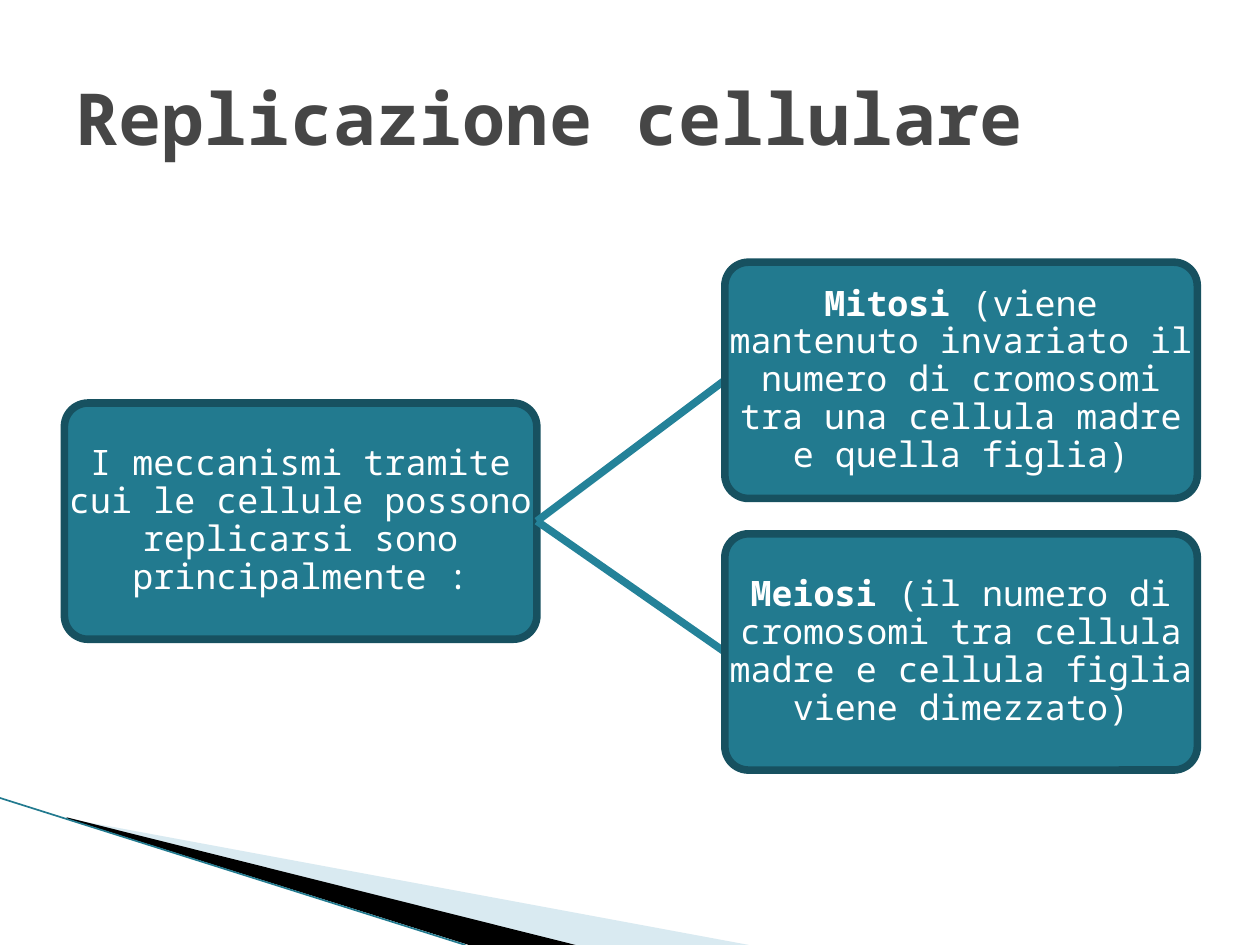
import pptx
import pptx.util
import pptx.dml.color
import pptx.enum.shapes
import pptx.enum.text
import pptx.oxml.ns
import pptx.oxml.xmlchemy

Pt = pptx.util.Pt
Shape = pptx.enum.shapes.MSO_SHAPE
Align = pptx.enum.text.PP_ALIGN
Anchor = pptx.enum.text.MSO_ANCHOR
qn = pptx.oxml.ns.qn
make = pptx.oxml.xmlchemy.OxmlElement

COLORS = {
    "title": "464646",
    "text": "FFFFFF",
    "box": "227A8F",
    "edge": "175160",
    "link": "248299",
    "pale": "A0CBDC",
    "black": "000000",
}
BOX_W, BOX_H = 270, 135
ROOT_X, LEAF_X = 36.8, 414.2
LEAF_Y, STEP = 149.8, 155.25
ROOT_Y = 230.3
LEAVES = [
    [("Mitosi ", True),
     ("(viene mantenuto invariato il numero di cromosomi "
      "tra una cellula madre e quella figlia)", False)],
    [("Meiosi", True),
     (" (il numero di cromosomi tra cellula madre "
      "e cellula figlia viene dimezzato)", False)],
]


def color(name):
    return pptx.dml.color.RGBColor.from_string(COLORS[name])


class Deck:
    font = "Noto Sans Mono"
    size = 20
    line = 4.33

    def __init__(self, width, height):
        self.prs = pptx.Presentation()
        self.prs.slide_width, self.prs.slide_height = Pt(width), Pt(height)
        self.slide = self.prs.slides.add_slide(self.prs.slide_layouts[5])
        self.shapes = self.slide.shapes

    def style(self, para, size, name):
        para.font.name = self.font
        para.font.size = Pt(size)
        para.font.color.rgb = color(name)

    def title(self, text, x, y, w, h):
        box = self.shapes.title
        box.left, box.top, box.width, box.height = map(Pt, (x, y, w, h))
        frame = box.text_frame
        frame.text = text
        frame.auto_size = pptx.enum.text.MSO_AUTO_SIZE.NONE
        frame.vertical_anchor = Anchor.MIDDLE
        para = frame.paragraphs[0]
        para.alignment = Align.LEFT
        self.style(para, 41, "title")
        para.font.bold = True

    def wedge(self, points, name, alpha=None):
        """Draw a filled outline; alpha is its opacity in percent."""
        pen = self.shapes.build_freeform(*points[0], scale=Pt(1))
        pen.add_line_segments(points[1:], close=True)
        shape = pen.convert_to_shape()
        shape.shadow.inherit = False
        shape.fill.solid()
        shape.fill.fore_color.rgb = color(name)
        shape.line.fill.background()
        if alpha:
            tint = shape._element.spPr.find(".//" + qn("a:srgbClr"))
            node = make("a:alpha")
            node.set("val", str(alpha * 1000))
            tint.append(node)

    def link(self, start, end, name, width):
        wire = self.shapes.add_connector(
            pptx.enum.shapes.MSO_CONNECTOR.STRAIGHT, *map(Pt, start + end))
        wire.line.color.rgb = color(name)
        wire.line.width = Pt(width)
        wire._element.spPr.append(make("a:effectLst"))
        return wire

    def box(self, x, y, runs):
        """Draw a rounded box, its text laid over the full width."""
        area = list(map(Pt, (x, y, BOX_W, BOX_H)))
        shape = self.shapes.add_shape(Shape.ROUNDED_RECTANGLE, *area)
        shape.adjustments[0] = 0.1
        shape.shadow.inherit = False
        shape.fill.solid()
        shape.fill.fore_color.rgb = color("box")
        shape.line.color.rgb = color("edge")
        shape.line.width = Pt(self.line)

        frame = self.shapes.add_textbox(*area).text_frame
        frame.word_wrap = True
        frame.vertical_anchor = Anchor.MIDDLE
        frame.margin_left = frame.margin_right = Pt(0.9)
        frame.margin_top = frame.margin_bottom = Pt(0.9)
        para = frame.paragraphs[0]
        para.alignment = Align.CENTER
        para.line_spacing = 0.9
        self.style(para, self.size, "text")
        for text, bold in runs:
            run = para.add_run()
            run.text = text
            run.font.bold = bold
        return shape


def main():
    deck = Deck(720, 540)
    deck.wedge([(39.6, 468.4), (428.4, 540), (328.3, 540), (39.6, 468)],
               "pale", 40)
    deck.wedge([(38.2, 467.3), (329, 540), (267.8, 540), (38.9, 468)],
               "black")
    deck.link((0, 456), (266, 540), "box", 0.95)

    root = deck.box(ROOT_X, ROOT_Y, [(
        "I meccanismi tramite cui le cellule possono "
        "replicarsi sono principalmente :", False)])
    for i, runs in enumerate(LEAVES):
        y = LEAF_Y + i * STEP
        # The link comes first so that the leaf covers its end.
        wire = deck.link((ROOT_X + BOX_W, ROOT_Y + BOX_H / 2),
                         (LEAF_X, y + BOX_H / 2), "link", deck.line)
        leaf = deck.box(LEAF_X, y, runs)
        wire.begin_connect(root, 3)
        wire.end_connect(leaf, 1)

    deck.title("Replicazione cellulare", 36, 21.6, 648, 90)
    deck.prs.save("out.pptx")


if __name__ == "__main__":
    main()
